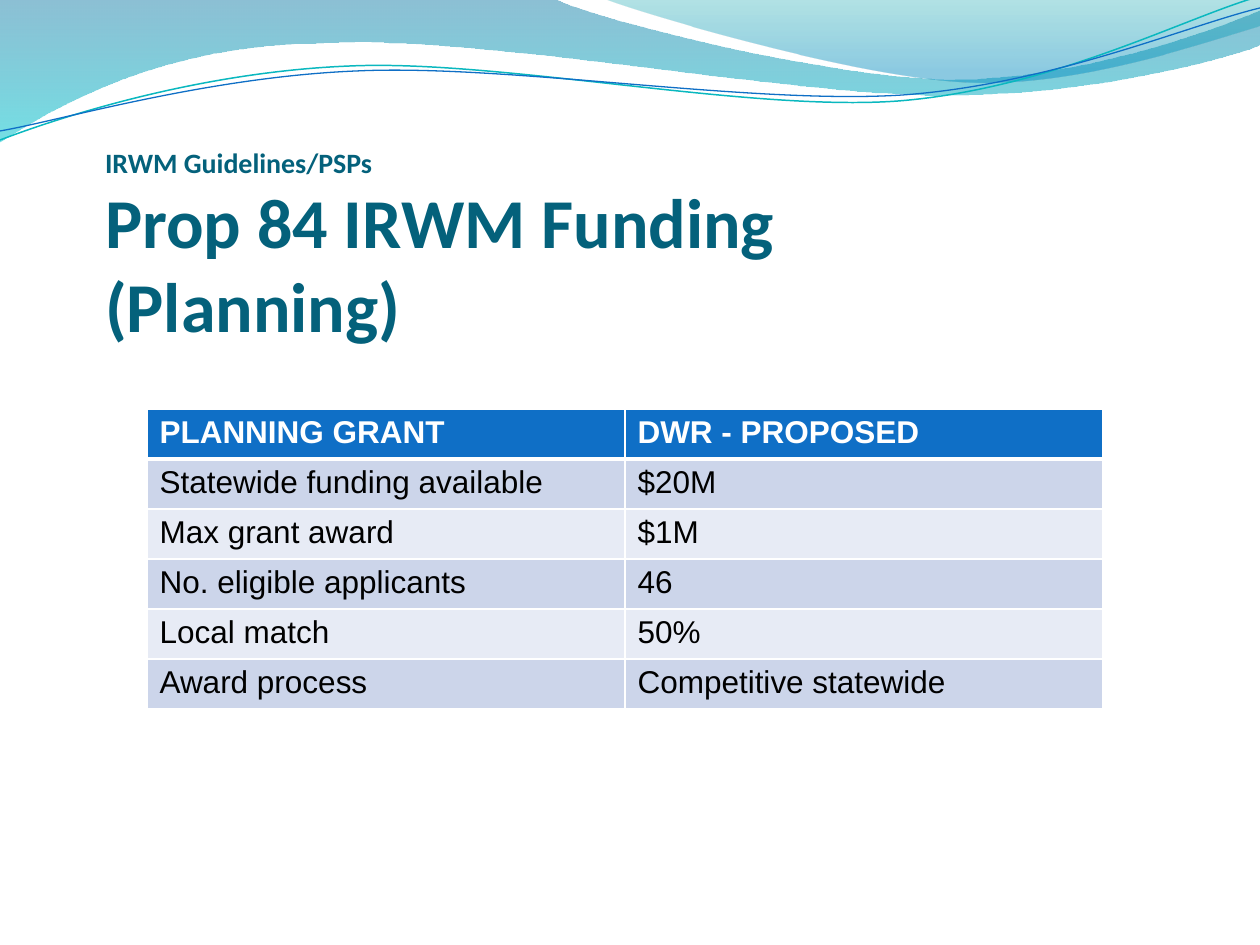
import copy

import pptx
import pptx.dml.color
import pptx.enum.text
import pptx.oxml
import pptx.oxml.ns
import pptx.util

# Content
TITLE = [("IRWM Guidelines/PSPs ", 16), ("Prop 84 IRWM Funding ", 40), ("(Planning)", 40)]
ROWS = [
    ("PLANNING GRANT", "DWR - PROPOSED"),
    ("Statewide funding available", "$20M"),
    ("Max grant award", "$1M"),
    ("No. eligible applicants", "46"),
    ("Local match", "50%"),
    ("Award process", "Competitive statewide"),
]

# Outlines in px: a start point, then lines (2 numbers) or Bezier curves (6 numbers)
# Waves: outline and gradient stops (position, colour, opacity %)
WAVES = [
    ([(0, -1), (554, -1), (600, 21, 837, 79, 955, 79), (1075, 79, 1207, 33, 1260, 11),
      (1261, 45), (1238, 55, 1096, 96, 940, 95), (784, 95, 481, 35, 324, 43),
      (163, 44, 58, 105, -1, 142)],
     [(0, "0074A1", 45), (1, "00C6CF", 55)]),
    ([(604, -1), (641, 14, 859, 78, 969, 82), (1079, 87, 1211, 40, 1260, 26), (1260, 0)],
     [(0, "00A1A9", 30), (0.8, "008BBF", 45)]),
]
# Thin lines: outline, colour and width in points
STROKES = [
    ([(0, 140), (60, 117, 199, 72, 349, 66), (498, 59, 747, 112, 898, 101),
      (1050, 89, 1182, 19, 1257, -3)], "0AB8BF", 0.85),
    ([(0, 131), (59, 121, 207, 77, 357, 71), (508, 64, 752, 105, 903, 95),
      (1053, 84, 1186, 26, 1260, 8)], "0F6FC6", 0.75),
]
TITLE_BOX = (105, 136, 1092, 211)
TABLE_LEFT, TABLE_TOP, COL_W, ROW_H = 147, 409, 478, 50
HEADER_FILL, BAND_FILLS = "0F6FC6", ("E7EBF5", "CCD5EA")
HEADER_BORDERS = {"L": 1, "R": 1, "T": 1, "B": 3}


def px(n):
    return round(n * 914400 / 126)


def rgb(color):
    return pptx.dml.color.RGBColor.from_string(color)


def style(run, **formats):
    for name, value in formats.items():
        setattr(run.font, name, value)


def add_outline(s, outline, close):
    points = [(px(seg[i]), px(seg[i + 1])) for seg in outline for i in range(0, len(seg), 2)]
    builder = s.shapes.build_freeform(*points[0], scale=1.0)
    builder.add_line_segments(points[1:], close=close)
    sp = builder.convert_to_shape()
    sp.shadow.inherit = False
    # Join the three points of each curve into one Bezier segment
    lines = iter(sp._element.xpath(".//a:path/a:lnTo"))
    for seg in outline[1:]:
        parts = [next(lines) for _ in range(len(seg) // 2)]
        if len(parts) == 3:
            curve = pptx.oxml.parse_xml(
                f'<a:cubicBezTo {pptx.oxml.ns.nsdecls("a")}/>')
            parts[0].addprevious(curve)
            for part in parts:
                curve.append(part[0])
                part.getparent().remove(part)
    return sp


def add_wave(s, outline, stops):
    sp = add_outline(s, outline, True)
    sp.line.fill.background()
    sp.fill.gradient()
    sp.fill.gradient_angle = 270
    for stop, (position, color, _) in zip(sp.fill.gradient_stops, stops):
        stop.position = position
        stop.color.rgb = rgb(color)
    for clr, (_, _, opacity) in zip(sp._element.spPr.xpath(".//a:gs/a:srgbClr"), stops):
        clr.append(pptx.oxml.parse_xml(
            f'<a:alpha {pptx.oxml.ns.nsdecls("a")} val="{opacity * 1000}"/>'))


def add_stroke(s, outline, color, width):
    sp = add_outline(s, outline, False)
    sp.fill.background()
    sp.line.color.rgb = rgb(color)
    sp.line.width = pptx.util.Pt(width)


def set_title(s):
    sp = s.shapes.title
    sp.left, sp.top, sp.width, sp.height = map(px, TITLE_BOX)
    tf = sp.text_frame
    frame = dict(margin_left=0, margin_right=0, margin_top=px(6), margin_bottom=0,
                 word_wrap=True, auto_size=pptx.enum.text.MSO_AUTO_SIZE.NONE,
                 vertical_anchor=pptx.enum.text.MSO_ANCHOR.BOTTOM)
    for name, value in frame.items():
        setattr(tf, name, value)
    p = tf.paragraphs[0]
    p.alignment = pptx.enum.text.PP_ALIGN.LEFT
    for i, (text, size) in enumerate(TITLE):
        if i:
            # The break takes the size of the line that it ends
            p.add_line_break()
            p._p[-1].append(copy.deepcopy(r._r.rPr))
        r = p.add_run()
        r.text = text
        style(r, name="Calibri", size=pptx.util.Pt(size), bold=True)
        r.font.color.rgb = rgb("04617B")


def set_borders(cell, widths):
    tc_pr = cell._tc.get_or_add_tcPr()
    for i, (side, width) in enumerate(widths.items()):
        tc_pr.insert(i, pptx.oxml.parse_xml(
            f'<a:ln{side} {pptx.oxml.ns.nsdecls("a")} w="{width * 12700}">'
            f'<a:solidFill><a:srgbClr val="FFFFFF"/></a:solidFill></a:ln{side}>'))


def add_grant_table(s):
    n_rows, n_cols = len(ROWS), len(ROWS[0])
    table = s.shapes.add_table(n_rows, n_cols, px(TABLE_LEFT), px(TABLE_TOP),
                               px(COL_W * n_cols), px(ROW_H * n_rows)).table
    for i, row in enumerate(ROWS):
        header = i == 0
        for j, text in enumerate(row):
            cell = table.cell(i, j)
            cell.fill.solid()
            cell.fill.fore_color.rgb = rgb(HEADER_FILL if header else BAND_FILLS[i % 2])
            if header:
                set_borders(cell, HEADER_BORDERS)
            r = cell.text_frame.paragraphs[0].add_run()
            r.text = text
            style(r, name="Arial", size=pptx.util.Pt(18), bold=header)
            r.font.color.rgb = rgb("FFFFFF" if header else "000000")


def main():
    prs = pptx.Presentation()
    prs.slide_width, prs.slide_height = px(1260), px(945)
    s = prs.slides.add_slide(prs.slide_layouts[5])
    # Header decoration
    for wave in WAVES:
        add_wave(s, *wave)
    for stroke in STROKES:
        add_stroke(s, *stroke)
    # Title and table
    set_title(s)
    add_grant_table(s)
    prs.save("out.pptx")


if __name__ == "__main__":
    main()
